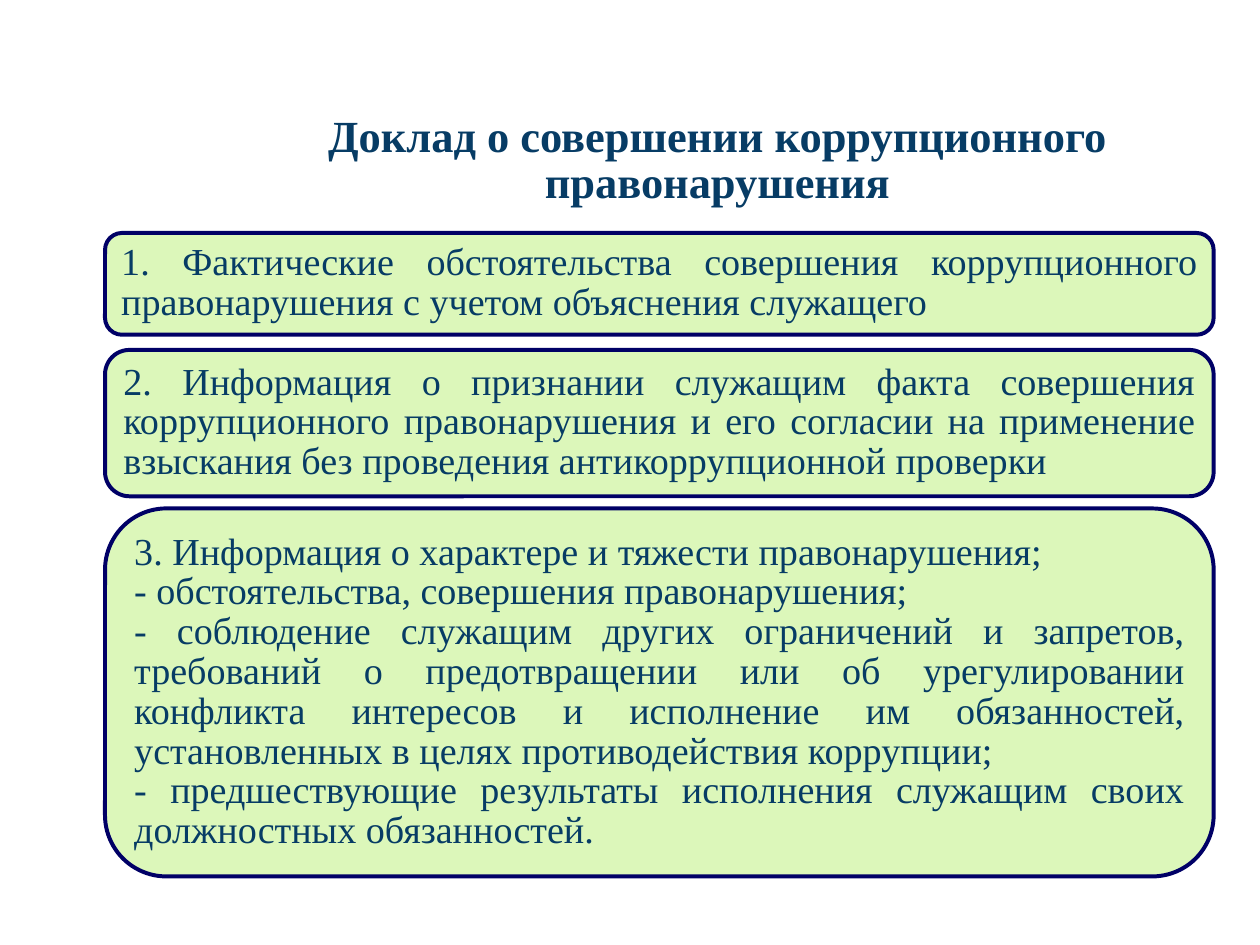
"""Build the slide on reporting a corruption offence."""
import pptx
import pptx.util
from pptx.dml.color import RGBColor
from pptx.enum.shapes import MSO_SHAPE
from pptx.enum.text import MSO_ANCHOR, MSO_AUTO_SIZE, PP_ALIGN

Pt = pptx.util.Pt

TITLE = "Доклад о совершении коррупционного правонарушения"
SECTIONS = [
    (146.75, 64.1, [
        "1. Фактические обстоятельства совершения коррупционного "
        "правонарушения с учетом объяснения служащего",
    ]),
    (220.4, 92.2, [
        "2. Информация о признании служащим факта совершения коррупционного "
        "правонарушения и его согласии на применение взыскания без проведения "
        "антикоррупционной проверки",
    ]),
    (320.25, 231.8, [
        "3. Информация о характере и тяжести правонарушения;",
        "- обстоятельства, совершения правонарушения;",
        "- соблюдение служащим других ограничений и запретов, требований "
        "о предотвращении или об урегулировании конфликта интересов и исполнение "
        "им обязанностей, установленных в целях противодействия коррупции;",
        "- предшествующие результаты исполнения служащим своих должностных "
        "обязанностей.",
    ]),
]

INK = RGBColor(0x07, 0x3C, 0x65)
PALE_GREEN = RGBColor(0xDC, 0xF7, 0xBA)
NAVY = RGBColor(0x00, 0x00, 0x66)
WHITE = RGBColor(0xFF, 0xFF, 0xFF)
SLIDE_WIDTH, SLIDE_HEIGHT = 793.75, 595.25
SECTION_LEFT, SECTION_WIDTH = 66.2, 698.4


def write(box, lines, size, align, anchor, bold=False):
    """Fill a shape with formatted paragraphs."""
    frame = box.text_frame
    frame.word_wrap = True
    frame.auto_size = MSO_AUTO_SIZE.NONE
    frame.vertical_anchor = anchor
    frame.text = "\n".join(lines)
    for para in frame.paragraphs:
        para.alignment = align
        para.line_spacing = 0.87
        para.space_before = para.space_after = Pt(0)
        for span in para.runs:
            span.font.name = "Times New Roman"
            span.font.size = Pt(size)
            span.font.bold = bold
            span.font.color.rgb = INK


def main():
    """Create and save the deck."""
    deck = pptx.Presentation()
    deck.slide_width, deck.slide_height = Pt(SLIDE_WIDTH), Pt(SLIDE_HEIGHT)
    page = deck.slides.add_slide(deck.slide_layouts[5])
    page.background.fill.solid()
    page.background.fill.fore_color.rgb = WHITE

    title = page.shapes.title
    title.left, title.top = Pt(139), Pt(69)
    title.width, title.height = Pt(625.6), Pt(66.2)
    write(title, [TITLE], size=28, align=PP_ALIGN.CENTER,
          anchor=MSO_ANCHOR.TOP, bold=True)

    for top, height, lines in SECTIONS:
        box = page.shapes.add_shape(
            MSO_SHAPE.ROUNDED_RECTANGLE,
            Pt(SECTION_LEFT), Pt(top), Pt(SECTION_WIDTH), Pt(height))
        box.shadow.inherit = False
        box.fill.solid()
        box.fill.fore_color.rgb = PALE_GREEN
        box.line.color.rgb = NAVY
        box.line.width = Pt(2.5)
        write(box, lines, size=24, align=PP_ALIGN.JUSTIFY,
              anchor=MSO_ANCHOR.MIDDLE)

    deck.save("out.pptx")


if __name__ == "__main__":
    main()
